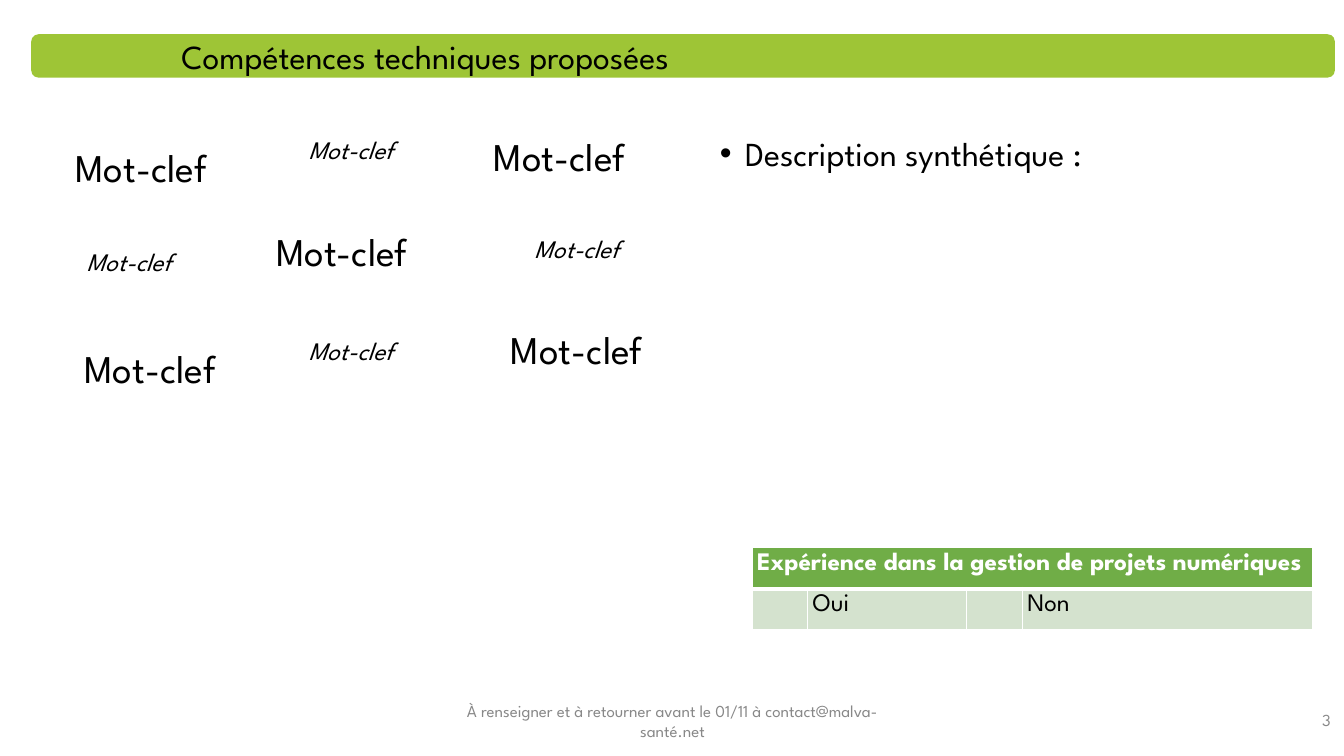
from lxml.etree import SubElement
from pptx import Presentation
from pptx.dml.color import RGBColor as Rgb
from pptx.enum.shapes import MSO_SHAPE as Shape
from pptx.enum.text import MSO_ANCHOR as Anchor, PP_ALIGN as Align
from pptx.oxml.ns import qn
from pptx.util import Inches, Pt

COLORS = {
    "bar": "9EC536",
    "header": "70AD47",
    "band": "D4E2CE",
    "text": "000000",
    "muted": "888888",
    "white": "FFFFFF",
}
FONT = "League Spartan"
KEYWORD = "Mot-clef"
LARGE_KEYWORDS = [(0.45, 1.43), (4.6, 1.32), (4.77, 3.23), (0.54, 3.42), (2.44, 2.26)]
SMALL_KEYWORDS = [(2.53, 1.32), (2.53, 3.31), (4.77, 2.3), (0.33, 2.43)]


def color(name):
    return Rgb.from_string(COLORS[name])


def write(frame, text, size=18, ink="text", bold=False, italic=False,
          align=Align.LEFT, anchor=Anchor.TOP, spacing=1.0, wrap=True, bullet=False):
    frame.word_wrap = wrap
    frame.vertical_anchor = anchor
    frame.margin_left = frame.margin_right = Inches(0.05)
    frame.margin_top = frame.margin_bottom = Inches(0.05)
    para = frame.paragraphs[0]
    para.alignment = align
    para.line_spacing = spacing
    para.space_before = Pt(0)
    if bullet:
        props = para._p.get_or_add_pPr()
        props.set("marL", str(Inches(0.25)))
        props.set("indent", str(-Inches(0.25)))
        SubElement(props, qn("a:buFont"), typeface="Arial")
        SubElement(props, qn("a:buChar"), char="•")
    span = para.add_run()
    span.text = text
    span.font.name = FONT
    span.font.size = Pt(size)
    span.font.bold = bold
    span.font.italic = italic
    span.font.color.rgb = color(ink)


class SlideBuilder:
    def __init__(self, page):
        self.page = page

    def title(self, text, left, top, width, height, **style):
        box = self.page.shapes.title
        box.left, box.top = Inches(left), Inches(top)
        box.width, box.height = Inches(width), Inches(height)
        write(box.text_frame, text, **style)

    def bar(self, left, top, width, height, fill):
        bar = self.page.shapes.add_shape(
            Shape.ROUNDED_RECTANGLE, Inches(left), Inches(top), Inches(width), Inches(height))
        bar.shadow.inherit = False
        bar.fill.solid()
        bar.fill.fore_color.rgb = color(fill)
        bar.line.fill.background()
        self.page.shapes.title.element.addprevious(bar.element)

    def text(self, text, left, top, width, height, **style):
        box = self.page.shapes.add_textbox(
            Inches(left), Inches(top), Inches(width), Inches(height))
        write(box.text_frame, text, **style)

    def table(self, left, top, widths, row_height, header, answers):
        table = self.page.shapes.add_table(
            2, len(widths), Inches(left), Inches(top),
            Inches(sum(widths)), Inches(2 * row_height)).table
        for column, width in zip(table.columns, widths):
            column.width = Inches(width)
        for row, fill in zip(table.rows, ["header", "band"]):
            row.height = Inches(row_height)
            for cell in row.cells:
                cell.fill.solid()
                cell.fill.fore_color.rgb = color(fill)
                cell.margin_left = cell.margin_right = Inches(0.05)
                cell.margin_top = cell.margin_bottom = Inches(0.05)
                self.borders(cell, {"B": 3} if fill == "header" else {"T": 3})
        table.cell(0, 0).merge(table.cell(0, len(widths) - 1))
        write(table.cell(0, 0).text_frame, header, ink="white", bold=True)
        for index, answer in answers.items():
            write(table.cell(1, index).text_frame, answer)

    def borders(self, cell, thick):
        props = cell._tc.get_or_add_tcPr()
        for index, side in enumerate("LRTB"):
            line = SubElement(props, qn(f"a:ln{side}"), w=str(Pt(thick.get(side, 1))))
            fill = SubElement(line, qn("a:solidFill"))
            SubElement(fill, qn("a:srgbClr"), val=COLORS["white"])
            props.insert(index, line)


def main():
    deck = Presentation()
    deck.slide_width, deck.slide_height = Inches(13.33), Inches(7.5)
    slide = SlideBuilder(deck.slides.add_slide(deck.slide_layouts[5]))

    slide.bar(0.31, 0.34, 12.93, 0.43, "bar")
    slide.title("Compétences techniques proposées", 1.75, 0.35, 7.64, 0.46,
                size=24, spacing=0.9)
    for left, top in LARGE_KEYWORDS:
        slide.text(KEYWORD, left, top, 1.9, 0.57, size=28, align=Align.CENTER, spacing=0.9)
    for left, top in SMALL_KEYWORDS:
        slide.text(KEYWORD, left, top, 1.9, 0.41, italic=True,
                   align=Align.CENTER, spacing=0.9)
    slide.text("Description synthétique :", 7.09, 1.31, 5.87, 0.5,
               size=24, spacing=0.9, bullet=True)
    slide.table(7.46, 5.43, [0.55, 1.58, 0.55, 2.88], 0.41,
                "Expérience dans la gestion de projets numériques", {1: "Oui", 3: "Non"})
    slide.text("À renseigner et à retourner avant le 01/11 à contact@malva-santé.net",
               4.42, 6.9, 4.5, 0.5, size=12, ink="muted",
               align=Align.CENTER, anchor=Anchor.MIDDLE)
    slide.text("3", 13.04, 7, 0.21, 0.29, size=12, ink="muted",
               align=Align.RIGHT, anchor=Anchor.MIDDLE, wrap=False)
    deck.save("out.pptx")


if __name__ == "__main__":
    main()
